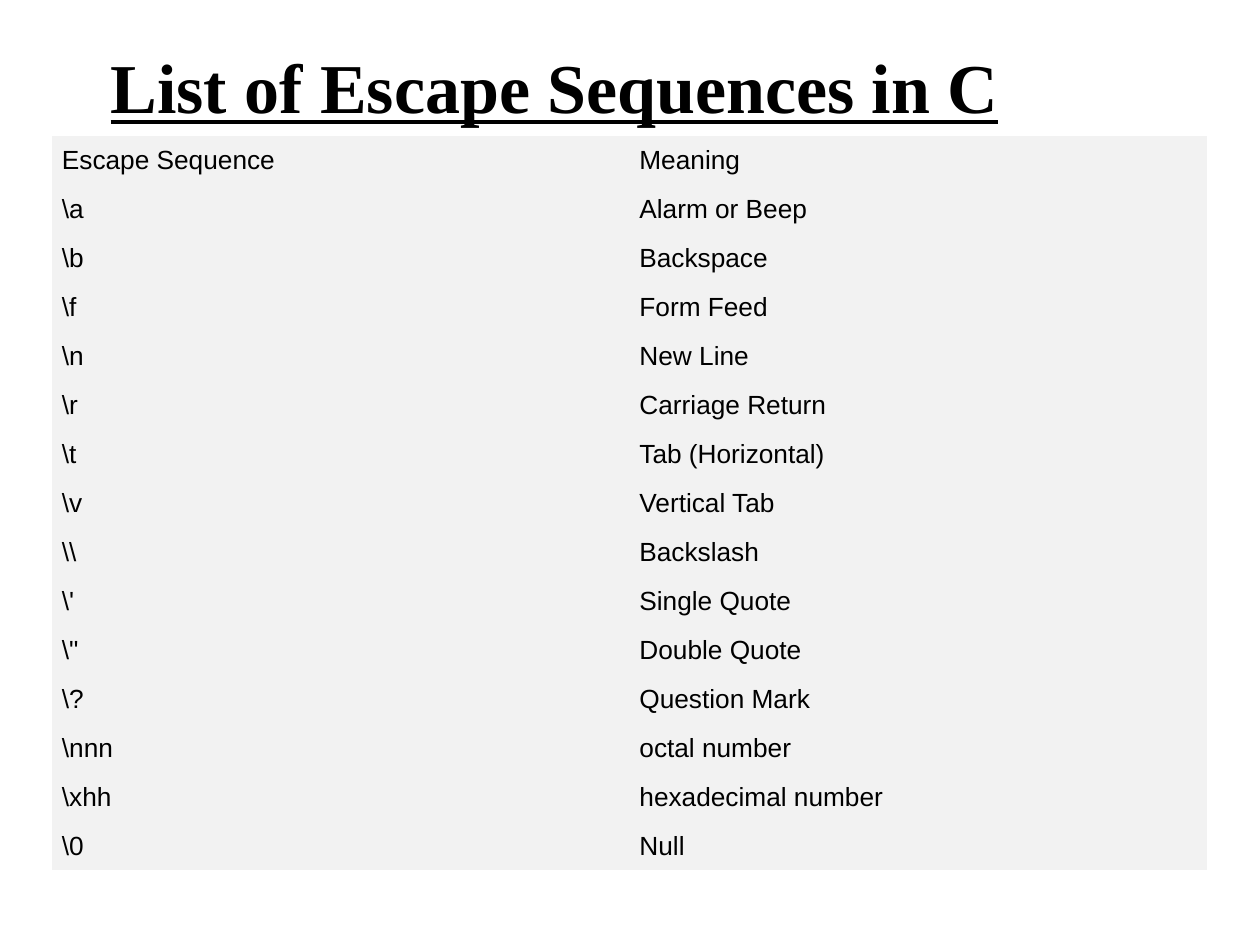
from pptx import Presentation
from pptx import util as u
from pptx.dml import color
from pptx.enum import text
from pptx.oxml import ns

SCALE = 914400 / 126
PLAIN = "{2D5ABB26-0587-4C30-8999-92F81FD0307C}"
ROWS = [
    ("Escape Sequence", "Meaning"),
    (r"\a", "Alarm or Beep"),
    (r"\b", "Backspace"),
    (r"\f", "Form Feed"),
    (r"\n", "New Line"),
    (r"\r", "Carriage Return"),
    (r"\t", "Tab (Horizontal)"),
    (r"\v", "Vertical Tab"),
    (r"\\", "Backslash"),
    (r"\'", "Single Quote"),
    (r'\"', "Double Quote"),
    (r"\?", "Question Mark"),
    (r"\nnn", "octal number"),
    (r"\xhh", "hexadecimal number"),
    (r"\0", "Null"),
]


def px(n):
    return u.Emu(round(n * SCALE))


def paint(fmt, code):
    if hasattr(fmt, "solid"):
        fmt.solid()
        fmt = fmt.fore_color
    fmt.rgb = color.RGBColor.from_string(code)


def add_run(para, words, face, size):
    run = para.add_run()
    run.text = words
    run.font.name = face
    run.font.size = u.Pt(size)
    paint(run.font.color, "000000")
    return run


def set_title(slide, words):
    title = slide.shapes.title
    title.left, title.top, title.width, title.height = map(px, (98, 31, 1066, 56))
    frame = title.text_frame
    frame.auto_size = text.MSO_AUTO_SIZE.NONE
    frame.word_wrap = True
    frame.vertical_anchor = text.MSO_ANCHOR.TOP
    frame.margin_top = px(13)
    para = frame.paragraphs[0]
    para.alignment = text.PP_ALIGN.LEFT
    run = add_run(para, words, "Times New Roman", 40)
    run.font.bold = run.font.underline = True


def fill_cell(cell, words):
    paint(cell.fill, "F2F2F2")
    cell.vertical_anchor = text.MSO_ANCHOR.MIDDLE
    cell.margin_left = cell.margin_right = px(10)
    cell.margin_top = cell.margin_bottom = px(5)
    add_run(cell.text_frame.paragraphs[0], words, "Arial", 15)


def add_grid(slide, rows):
    wide, high = 1155, 49 * len(rows)
    frame = slide.shapes.add_table(
        len(rows), len(rows[0]), px(52), px(136), px(wide), px(high))
    grid = frame.table
    grid.first_row = grid.horz_banding = False
    grid._tbl.tblPr.find(ns.qn("a:tableStyleId")).text = PLAIN
    for r, row in enumerate(rows):
        for c, words in enumerate(row):
            fill_cell(grid.cell(r, c), words)


def main():
    deck = Presentation()
    deck.slide_width, deck.slide_height = px(1260), px(945)
    slide = deck.slides.add_slide(deck.slide_layouts[5])
    paint(slide.background.fill, "FFFFFF")
    set_title(slide, "List of Escape Sequences in C")
    add_grid(slide, ROWS)
    deck.save("out.pptx")


if __name__ == "__main__":
    main()
